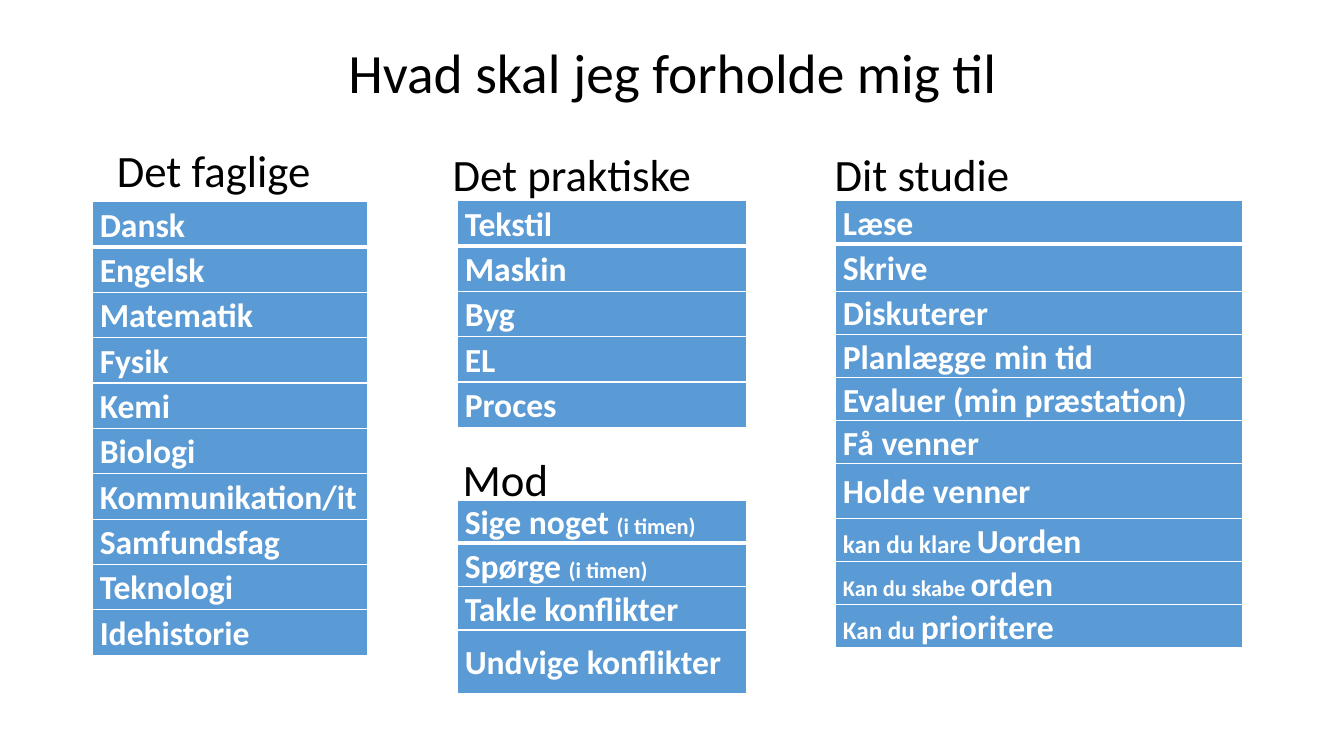
from dataclasses import dataclass

from lxml import etree
from pptx import Presentation
from pptx import util as u
from pptx.dml.color import RGBColor
from pptx.enum import text as t
from pptx.oxml import ns


@dataclass(frozen=True)
class Theme:
    font: str = "Calibri"
    black: str = "000000"
    white: str = "FFFFFF"
    blue: str = "5B9BD5"
    title: float = 39.6
    heading: float = 32
    item: float = 24
    aside: float = 18
    small: float = 16
    rule: float = 1
    thick_rule: float = 3


THEME = Theme()

# Each row is a list of (text, size) spans
SUBJECTS = [[(name, THEME.item)] for name in (
    "Dansk", "Engelsk", "Matematik", "Fysik", "Kemi", "Biologi",
    "Kommunikation/it", "Samfundsfag", "Teknologi", "Idehistorie")]
WORKSHOPS = [[(name, THEME.item)] for name in (
    "Tekstil", "Maskin", "Byg", "EL", "Proces")]
COURAGE = [
    [("Sige noget ", THEME.item), ("(i timen)", THEME.small)],
    [("Spørge ", THEME.item), ("(i timen)", THEME.small)],
    [("Takle konflikter", THEME.item)],
    [("Undvige konflikter", THEME.item)],
]
STUDIES = [[(name, THEME.item)] for name in (
    "Læse", "Skrive", "Diskuterer", "Planlægge min tid",
    "Evaluer (min præstation)", "Få venner", "Holde venner")] + [
    [("kan du klare ", THEME.aside), ("Uorden", THEME.item)],
    [("Kan du skabe ", THEME.small), ("orden", THEME.item)],
    [("Kan du ", THEME.aside), ("prioritere", THEME.item)],
]


def add_span(para, text, size=THEME.item, color=THEME.black, bold=False):
    """Append one formatted run to a paragraph."""
    span = para.add_run()
    span.text = text
    span.font.name = THEME.font
    span.font.size = u.Pt(size)
    span.font.bold = bold
    span.font.color.rgb = RGBColor.from_string(color)


def place(shape, left, top, width, height):
    shape.left, shape.top = u.Inches(left), u.Inches(top)
    shape.width, shape.height = u.Inches(width), u.Inches(height)


def add_title(page, text):
    title = page.shapes.title
    place(title, 0.92, 0.4, 11.5, 0.69)
    frame = title.text_frame
    frame.auto_size = t.MSO_AUTO_SIZE.NONE
    frame.vertical_anchor = t.MSO_ANCHOR.MIDDLE
    para = frame.paragraphs[0]
    para.alignment = t.PP_ALIGN.CENTER
    para.line_spacing = 0.9
    add_span(para, text, size=THEME.title)


def add_heading(page, text, left, top, width):
    box = page.shapes.add_textbox(
        u.Inches(left), u.Inches(top), u.Inches(width), u.Inches(0.64))
    frame = box.text_frame
    frame.word_wrap = False
    frame.auto_size = t.MSO_AUTO_SIZE.SHAPE_TO_FIT_TEXT
    add_span(frame.paragraphs[0], text, size=THEME.heading)


def set_borders(cell, top, bottom):
    """Draw white cell borders; top and bottom are widths in points."""
    properties = cell._tc.get_or_add_tcPr()
    widths = {"lnL": THEME.rule, "lnR": THEME.rule, "lnT": top, "lnB": bottom}
    for index, (side, width) in enumerate(widths.items()):
        line = etree.Element(ns.qn(f"a:{side}"), w=str(u.Pt(width)))
        fill = etree.SubElement(line, ns.qn("a:solidFill"))
        etree.SubElement(fill, ns.qn("a:srgbClr"), val=THEME.white)
        properties.insert(index, line)


def add_list(page, rows, left, top, width, heights):
    """Add a one-column table with a thick rule below its first row."""
    table = page.shapes.add_table(
        len(rows), 1, u.Inches(left), u.Inches(top),
        u.Inches(width), u.Inches(sum(heights))).table
    table.horz_banding = False
    for index, (spans, height) in enumerate(zip(rows, heights)):
        table.rows[index].height = u.Inches(height)
        cell = table.cell(index, 0)
        cell.fill.solid()
        cell.fill.fore_color.rgb = RGBColor.from_string(THEME.blue)
        cell.vertical_anchor = t.MSO_ANCHOR.MIDDLE
        cell.margin_left = cell.margin_right = u.Inches(0.07)
        cell.margin_top = cell.margin_bottom = 0
        set_borders(cell,
                    top=THEME.thick_rule if index == 1 else THEME.rule,
                    bottom=THEME.thick_rule if index == 0 else THEME.rule)
        para = cell.text_frame.paragraphs[0]
        para.line_spacing = 1.07
        for text, size in spans:
            add_span(para, text, size=size, color=THEME.white, bold=True)


def main():
    deck = Presentation()
    deck.slide_width, deck.slide_height = u.Inches(13.33), u.Inches(7.5)
    page = deck.slides.add_slide(deck.slide_layouts[5])
    add_title(page, "Hvad skal jeg forholde mig til")

    # Left column: school subjects
    add_list(page, SUBJECTS, 0.92, 2, 2.73, [0.45] * 10)
    add_heading(page, "Det faglige", 1.06, 1.37, 2.15)

    # Middle column: workshops and courage
    add_list(page, WORKSHOPS, 4.54, 1.99, 2.86, [0.45] * 5)
    add_heading(page, "Det praktiske", 4.39, 1.41, 2.59)
    add_list(page, COURAGE, 4.54, 4.96, 2.86, [0.43] * 3 + [0.63])
    add_heading(page, "Mod", 4.49, 4.43, 1.16)

    # Right column: study habits
    add_list(page, STUDIES, 8.29, 1.99, 4.03,
             [0.41, 0.47] + [0.41] * 4 + [0.54] + [0.41] * 3)
    add_heading(page, "Dit studie", 8.18, 1.41, 1.96)

    deck.save("out.pptx")


if __name__ == "__main__":
    main()
